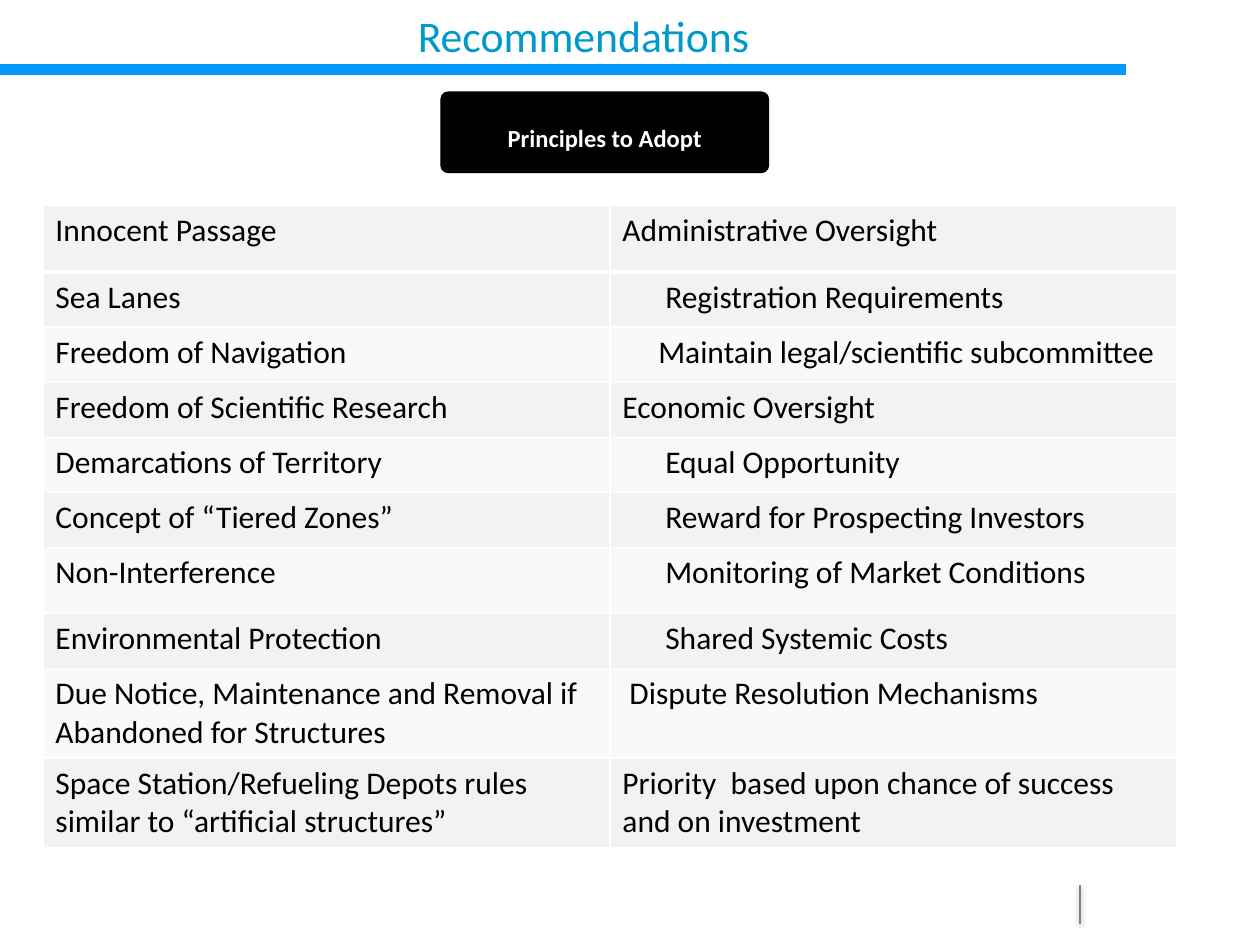
from dataclasses import dataclass

import pptx
import pptx.dml.color
import pptx.enum.shapes
import pptx.enum.text
import pptx.oxml
import pptx.oxml.ns
import pptx.util

Pt = pptx.util.Pt
PP_ALIGN = pptx.enum.text.PP_ALIGN
MIDDLE = pptx.enum.text.MSO_ANCHOR.MIDDLE


@dataclass(frozen=True)
class Theme:
    font: str = "Calibri"
    title_size: float = 25
    label_size: float = 14
    cell_size: float = 18
    title: str = "0099CC"
    rule: str = "0099FF"
    tick: str = "808080"
    dark: str = "000000"
    light: str = "FFFFFF"
    bands: tuple = ("F2F2F2", "F9F9F9")


THEME = Theme()

# Left text, right text, right indent level, row height
PRINCIPLES = [
    ("Innocent Passage", "Administrative Oversight", 0, 38),
    ("Sea Lanes", "Registration Requirements", 24.5, 31.5),
    ("Freedom of Navigation", "Maintain legal/scientific subcommittee", 20.5, 31.5),
    ("Freedom of Scientific Research", "Economic Oversight", 0, 31.5),
    ("Demarcations of Territory", "Equal Opportunity", 24.5, 31.5),
    ("Concept of “Tiered Zones”", "Reward for Prospecting Investors", 24.5, 31.5),
    ("Non-Interference", "Monitoring of Market Conditions", 24.5, 37.5),
    ("Environmental Protection", "Shared Systemic Costs", 24.5, 31.5),
    ("Due Notice, Maintenance and Removal if Abandoned for Structures",
     "Dispute Resolution Mechanisms", 4, 51),
    ("Space Station/Refueling Depots rules similar to “artificial structures”",
     "Priority  based upon chance of success and on investment", 0, 51),
]


def rgb(value):
    return pptx.dml.color.RGBColor.from_string(value)


def write(frame, text, size, color, bold=False, align=None):
    frame.text = text
    paragraph = frame.paragraphs[0]
    paragraph.alignment = align
    font = paragraph.runs[0].font
    font.name, font.size, font.bold = THEME.font, Pt(size), bold
    font.color.rgb = rgb(color)
    return paragraph


def add_rule(slide, start, end, color, width, effect=""):
    rule = slide.shapes.add_connector(
        pptx.enum.shapes.MSO_CONNECTOR.STRAIGHT, *map(Pt, start + end))
    rule.line.color.rgb = rgb(color)
    rule.line.width = Pt(width)
    rule._element.spPr.append(pptx.oxml.parse_xml(
        f'<a:effectLst {pptx.oxml.ns.nsdecls("a")}>{effect}</a:effectLst>'))


def add_header(slide, left, top, width, height):
    # Title above a thick rule
    title = slide.shapes.title
    title.left, title.top, title.width, title.height = map(Pt, (left, top, width, height))
    title.text_frame.vertical_anchor = MIDDLE
    write(title.text_frame, "Recommendations", THEME.title_size, THEME.title,
          align=PP_ALIGN.CENTER)
    rule_y = top + height - 1.5
    add_rule(slide, (left, rule_y), (left + width - 23, rule_y), THEME.rule, 6)


def add_label(slide, left, top, width, height):
    label = slide.shapes.add_shape(
        pptx.enum.shapes.MSO_SHAPE.ROUNDED_RECTANGLE, *map(Pt, (left, top, width, height)))
    label.adjustments[0] = 0.09
    label.shadow.inherit = False
    label.fill.solid()
    label.fill.fore_color.rgb = rgb(THEME.dark)
    label.line.color.rgb = rgb(THEME.dark)
    label.line.width = Pt(0.75)
    frame = label.text_frame
    frame.vertical_anchor = MIDDLE
    frame.margin_left = frame.margin_right = frame.margin_bottom = 0
    frame.margin_top = Pt(6)
    write(frame, "Principles to Adopt", THEME.label_size, THEME.light, True, PP_ALIGN.CENTER)


def set_borders(cell, top, bottom):
    properties = cell._tc.get_or_add_tcPr()
    for place, (side, width) in enumerate(
            (("L", 1), ("R", 1), ("T", top), ("B", bottom))):
        properties.insert(place, pptx.oxml.parse_xml(
            f'<a:ln{side} {pptx.oxml.ns.nsdecls("a")} w="{Pt(width)}"><a:solidFill>'
            f'<a:srgbClr val="{THEME.light}"/></a:solidFill></a:ln{side}>'))


def add_principles(slide, left, top, width):
    height = sum(row[-1] for row in PRINCIPLES)
    table = slide.shapes.add_table(
        len(PRINCIPLES), 2, *map(Pt, (left, top, width, height))).table
    for column in table.columns:
        column.width = Pt(width / 2)
    for index, (principle, measure, indent, row_height) in enumerate(PRINCIPLES):
        table.rows[index].height = Pt(row_height)
        # The first two rows share a band; after that the bands alternate
        band = THEME.bands[(index - 1) % 2 if index else 0]
        for column, (text, margin) in enumerate(((principle, 0), (measure, indent))):
            cell = table.cell(index, column)
            cell.fill.solid()
            cell.fill.fore_color.rgb = rgb(band)
            set_borders(cell, 3 if index == 1 else 1, 3 if index == 0 else 1)
            paragraph = write(cell.text_frame, text, THEME.cell_size, THEME.dark)
            if margin:
                paragraph._p.get_or_add_pPr().set("marL", str(Pt(margin)))


def add_footer_tick(slide, left, top, height):
    shadow = (f'<a:outerShdw blurRad="{Pt(3.1)}" dist="{Pt(1.6)}" dir="5400000">'
              f'<a:srgbClr val="{THEME.dark}"><a:alpha val="38000"/></a:srgbClr></a:outerShdw>')
    add_rule(slide, (left, top), (left, top + height), THEME.tick, 1, shadow)


def main():
    deck = pptx.Presentation()
    deck.slide_width, deck.slide_height = Pt(720), Pt(540)
    slide = deck.slides.add_slide(deck.slide_layouts.get_by_name("Title Only"))
    add_footer_tick(slide, 617, 506, 22)
    add_header(slide, 0, -0.7, 666.7, 41.8)
    add_label(slide, 252, 52.6, 187.2, 46)
    add_principles(slide, 24.5, 117.5, 648)
    deck.save("out.pptx")


if __name__ == "__main__":
    main()
